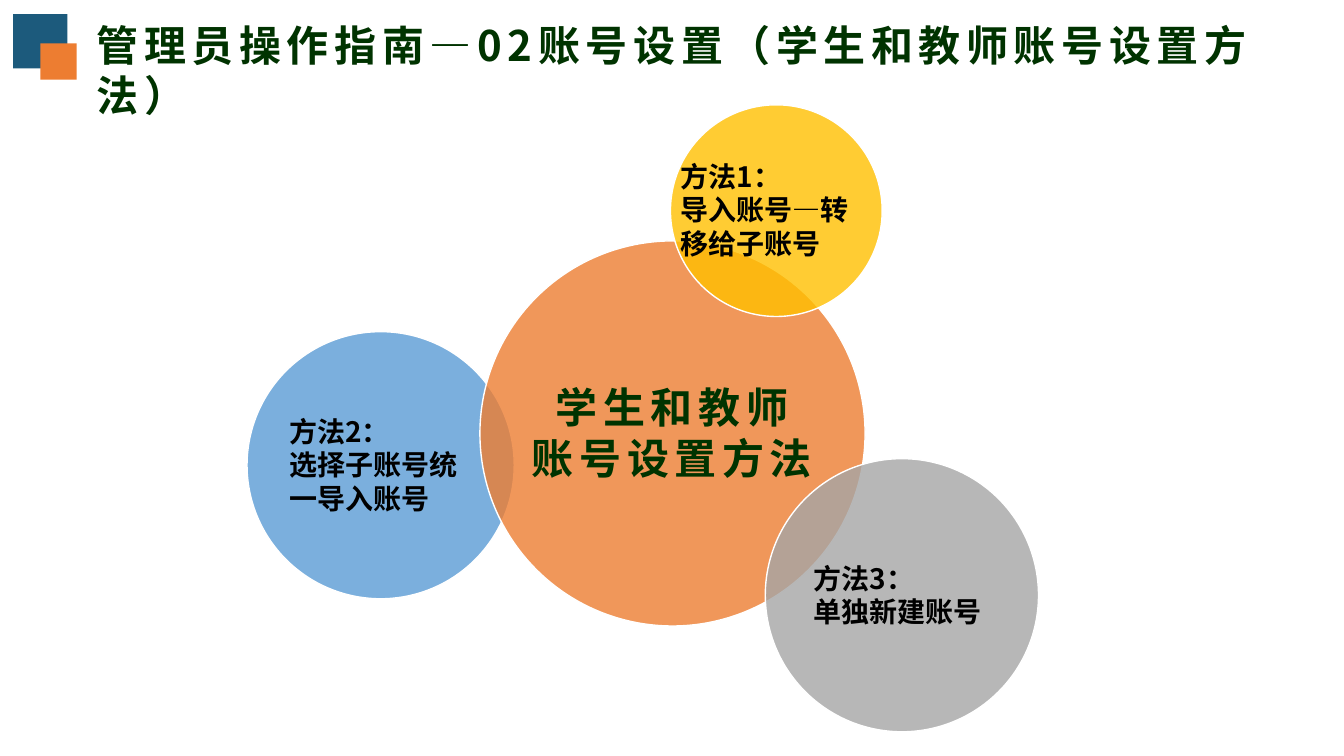
from lxml import etree
from pptx import Presentation
from pptx import util as u
from pptx.dml.color import RGBColor
from pptx.enum import shapes, text
from pptx.oxml import ns

# Content
TITLE = "管理员操作指南—02账号设置（学生和教师账号设置方法）"
FONT = "Noto Sans CJK SC"
COLORS = {"blue": "5B9BD5", "orange": "ED7D31", "grey": "A5A5A5", "gold": "FFC000",
          "teal": "1C5A7C", "green": "003300", "black": "000000", "white": "FFFFFF"}
HEADING = {"size": 30, "color": "green", "spacing": 4}
BODY = {"size": 20, "color": "black", "spacing": 0}

# Circles, back to front: left, top, diameter, colour
CIRCLES = [
    (2.45, 3.29, 2.65, "blue"),
    (4.76, 2.39, 3.82, "orange"),
    (7.59, 4.55, 2.71, "grey"),
    (6.65, 1.04, 2.1, "gold"),
]
# Corner mark: left, top, side, colour
SQUARES = [(0.13, 0.14, 0.54, "teal"), (0.4, 0.43, 0.36, "orange")]
# Labels: box, lines, style, alignment
LABELS = [
    ((5.07, 3.74, 3.19, 1.11), ["学生和教师", "账号设置方法"], HEADING, text.PP_ALIGN.CENTER),
    ((6.65, 1.53, 2.1, 1.11), ["方法1：", "导入账号—转移给子账号"], BODY, text.PP_ALIGN.LEFT),
    ((2.77, 4.06, 2, 1.11), ["方法2：", "选择子账号统一导入账号"], BODY, text.PP_ALIGN.LEFT),
    ((7.97, 5.52, 1.95, 0.77), ["方法3：", "单独新建账号"], BODY, text.PP_ALIGN.LEFT),
]


def rgb(name):
    return RGBColor.from_string(COLORS[name])


def write(frame, lines, style, align):
    frame.text = "\n".join(lines)
    frame.word_wrap = True
    frame.vertical_anchor = text.MSO_ANCHOR.TOP
    frame.auto_size = text.MSO_AUTO_SIZE.NONE
    for paragraph in frame.paragraphs:
        paragraph.alignment = align
        paragraph.line_spacing = 1.0
        for run in paragraph.runs:
            run.font.size = u.Pt(style["size"])
            run.font.bold = True
            run.font.color.rgb = rgb(style["color"])
            run.font.name = FONT
            # East Asian typeface and letter spacing
            props = run._r.get_or_add_rPr()
            props.set("spc", str(style["spacing"] * 100))
            etree.SubElement(props, ns.qn("a:ea"), typeface=FONT)


def add_solid(slide, kind, left, top, side, color):
    solid = slide.shapes.add_shape(kind, *map(u.Inches, (left, top, side, side)))
    solid.shadow.inherit = False
    solid.fill.solid()
    solid.fill.fore_color.rgb = rgb(color)
    solid.line.fill.background()
    return solid


def main():
    deck = Presentation()
    deck.slide_width, deck.slide_height = u.Inches(13.33), u.Inches(7.5)
    slide = deck.slides.add_slide(deck.slide_layouts[5])

    # Title
    title = slide.shapes.title
    title.left, title.top, title.width, title.height = map(u.Inches, (0.86, 0.14, 12.26, 0.6))
    write(title.text_frame, [TITLE], HEADING, text.PP_ALIGN.LEFT)

    # Overlapping translucent circles
    for left, top, diameter, color in CIRCLES:
        circle = add_solid(slide, shapes.MSO_SHAPE.OVAL, left, top, diameter, color)
        circle.line.color.rgb = rgb("white")
        circle.line.width = u.Pt(1)
        tint = circle._element.spPr.find(ns.qn("a:solidFill"))[0]
        etree.SubElement(tint, ns.qn("a:alpha"), val="80000")

    # Corner mark
    mark = slide.shapes.add_group_shape()
    for square in SQUARES:
        add_solid(mark, shapes.MSO_SHAPE.RECTANGLE, *square)

    # Labels
    for box, lines, style, align in LABELS:
        label = slide.shapes.add_textbox(*map(u.Inches, box))
        write(label.text_frame, lines, style, align)

    deck.save("out.pptx")


if __name__ == "__main__":
    main()
